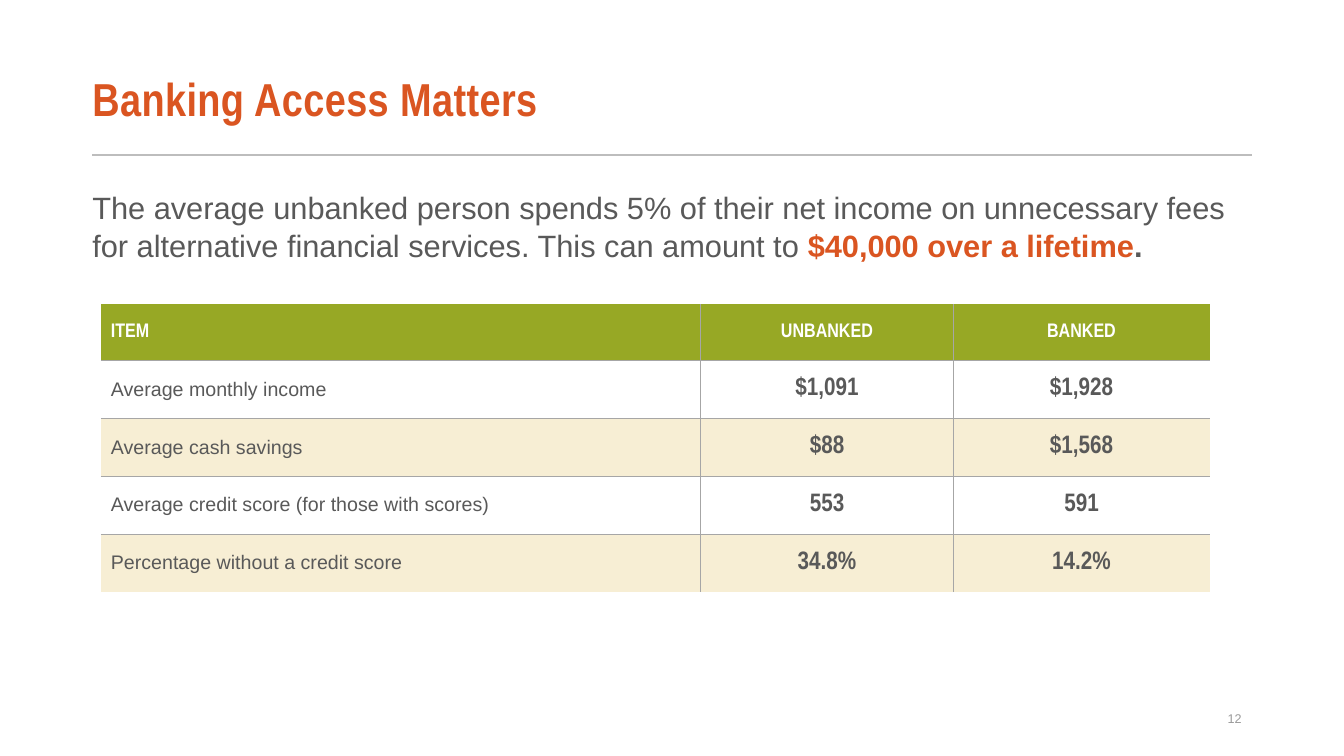
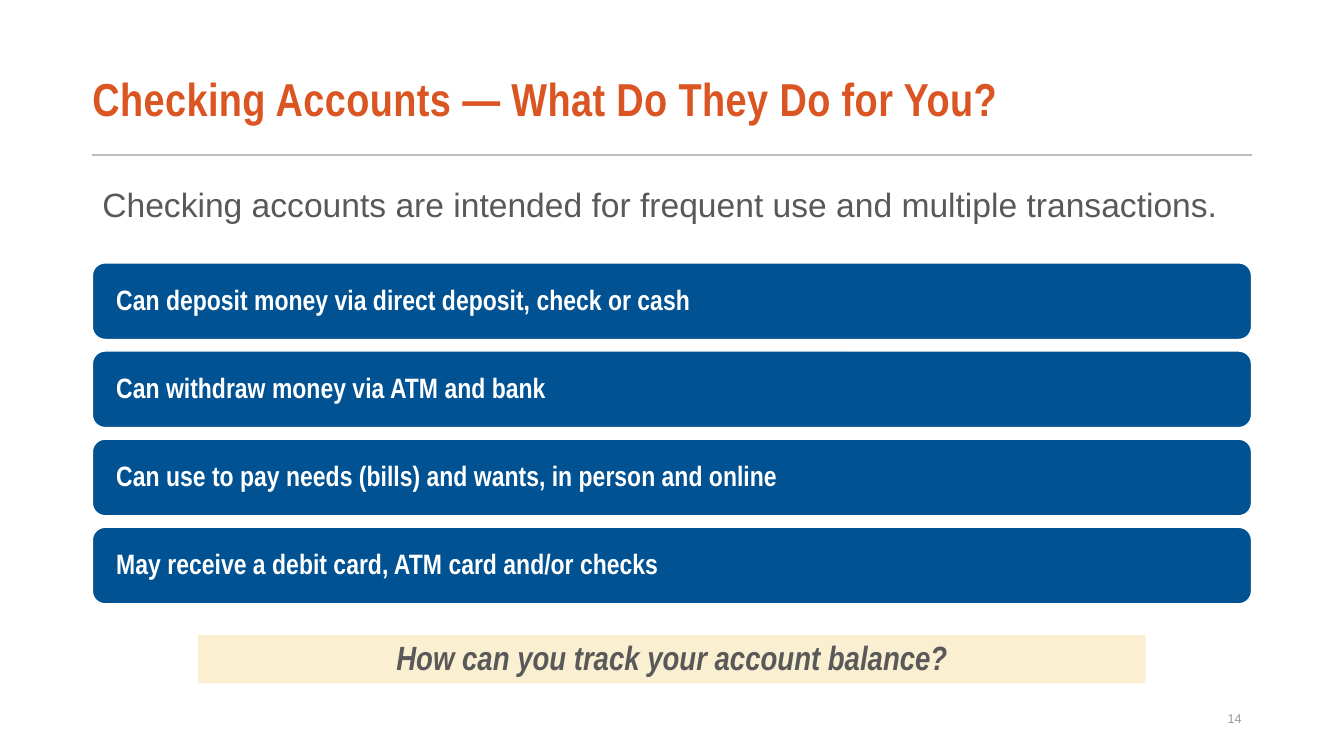
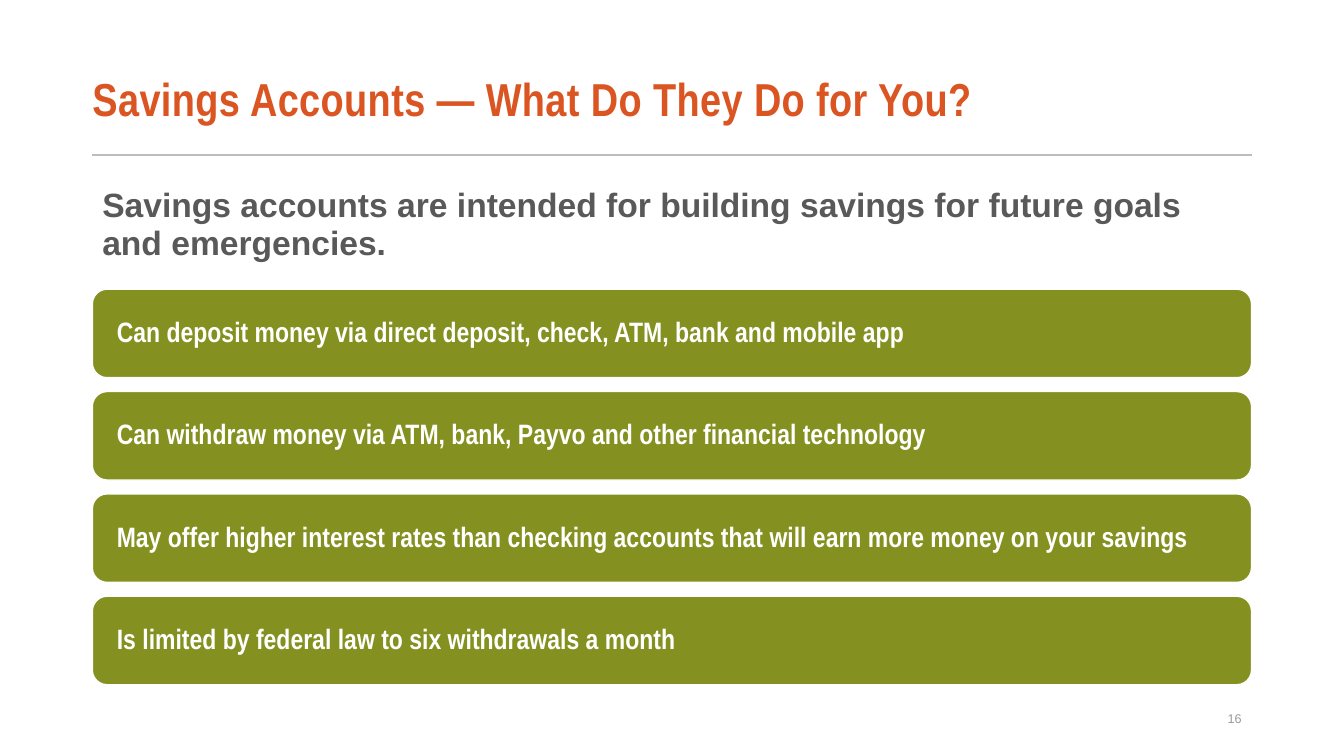
from lxml.etree import SubElement
from pptx import Presentation
from pptx.dml.color import RGBColor
from pptx.enum.shapes import MSO_CONNECTOR, MSO_SHAPE
from pptx.enum.text import MSO_ANCHOR as ANCHOR, MSO_AUTO_SIZE as FIT, PP_ALIGN as ALIGN
from pptx.oxml.ns import qn
from pptx.util import Pt

COLORS = {
    "orange": "DA5521", "gray": "595959", "white": "FFFFFF", "rule": "BDBDBD",
    "number": "9A9A9A", "grid": "A6A6A6", "header": "97A825", "band": "F7EED4",
    "blue": "005293", "olive": "849120", "cream": "FBEFD2",
}
HEADING, BODY = "Arial Narrow", "Arial"
LEFT, WIDTH = 66, 828


def color(name):
    return RGBColor.from_string(COLORS[name])


def write(frame, text, size, face, ink, bold=False, align=ALIGN.LEFT, spacing=None, anchor=None):
    frame.word_wrap = True
    if anchor is not None:
        frame.vertical_anchor = anchor
    line = frame.paragraphs[0]
    line.text = text
    line.alignment = align
    if spacing:
        line.line_spacing = spacing
    line.font.name, line.font.size, line.font.bold = face, Pt(size), bold
    line.font.color.rgb = color(ink)
    return line


deck = Presentation()
deck.slide_width, deck.slide_height = Pt(960), Pt(540)
title_only = deck.slide_layouts[5]

slides = []
for heading, number in [
    ("Banking Access Matters", "12"),
    ("Checking Accounts — What Do They Do for You?", "14"),
    ("Savings Accounts — What Do They Do for You?", "16"),
]:
    slide = deck.slides.add_slide(title_only)
    slides.append(slide)
    rule = slide.shapes.add_connector(
        MSO_CONNECTOR.STRAIGHT, Pt(LEFT), Pt(111), Pt(LEFT + WIDTH), Pt(111))
    rule.line.color.rgb, rule.line.width = color("rule"), Pt(1.5)
    SubElement(rule._element.spPr, qn("a:effectLst"))

    title = slide.shapes.title
    title.left, title.top, title.width, title.height = Pt(LEFT), Pt(39), Pt(WIDTH), Pt(68.4)
    title.text_frame.auto_size = FIT.NONE
    title.text_frame.margin_left = 0
    line = write(title.text_frame, heading, 33, HEADING, "orange", True,
                 spacing=0.87, anchor=ANCHOR.MIDDLE)
    line.runs[0]._r.get_or_add_rPr().set("spc", "30")

    page = slide.shapes.add_textbox(Pt(678), Pt(499), Pt(216), Pt(28.8))
    write(page.text_frame, number, 9, BODY, "number", align=ALIGN.RIGHT, anchor=ANCHOR.MIDDLE)

access, checking, savings = slides

cost = access.shapes.add_textbox(Pt(LEFT), Pt(129.6), Pt(WIDTH), Pt(70))
cost.text_frame.margin_left = 0
sentence = write(
    cost.text_frame,
    "The average unbanked person spends 5% of their net income on unnecessary "
    "fees for alternative financial services. This can amount to ",
    22, BODY, "gray", spacing=1.05)
for words, ink in [("$40,000 over a lifetime", "orange"), (".", "gray")]:
    run = sentence.add_run()
    run.text = words
    run.font.bold = True
    run.font.color.rgb = color(ink)

figures = [
    ("ITEM", "UNBANKED", "BANKED"),
    ("Average monthly income", "$1,091", "$1,928"),
    ("Average cash savings", "$88", "$1,568"),
    ("Average credit score (for those with scores)", "553", "591"),
    ("Percentage without a credit score", "34.8%", "14.2%"),
]
last_row, last_col = len(figures) - 1, len(figures[0]) - 1
comparison = access.shapes.add_table(
    len(figures), len(figures[0]), Pt(72), Pt(217.3), Pt(792), Pt(205.5)).table
for column, width in zip(comparison.columns, (428.4, 180.7, 182.9)):
    column.width = Pt(width)
for r, values in enumerate(figures):
    comparison.rows[r].height = Pt(41.3 if r else 40.3)
    for c, value in enumerate(values):
        cell = comparison.cell(r, c)
        borders = cell._tc.get_or_add_tcPr()
        for side, inner in [("L", c > 0), ("R", c < last_col), ("T", r > 0), ("B", r < last_row)]:
            edge = SubElement(borders, qn(f"a:ln{side}"), w=str(Pt(0.5)))
            if inner:
                ink = SubElement(edge, qn("a:solidFill"))
                SubElement(ink, qn("a:srgbClr"), val=COLORS["grid"])
            else:
                SubElement(edge, qn("a:noFill"))
        cell.fill.solid()
        cell.fill.fore_color.rgb = color("header" if r == 0 else "white" if r % 2 else "band")
        cell.vertical_anchor = ANCHOR.MIDDLE
        write(cell.text_frame, value, 18 if r and c else 14,
              BODY if r and c == 0 else HEADING, "gray" if r else "white",
              r == 0 or c > 0, ALIGN.CENTER if c else ALIGN.LEFT)

for slide, lead, lead_width, lead_bold, fill, top, height, pitch, features in [
    (checking, "Checking accounts are intended for frequent use and multiple transactions.",
     840, False, "blue", 187.8, 54.7, 62.95, [
         "Can deposit money via direct deposit, check or cash",
         "Can withdraw money via ATM and bank",
         "Can use to pay needs (bills) and wants, in person and online",
         "May receive a debit card, ATM card and/or checks",
     ]),
    (savings, "Savings accounts are intended for building savings for future goals and emergencies.",
     805, True, "olive", 206.6, 63.2, 73.1, [
         "Can deposit money via direct deposit, check, ATM, bank and mobile app",
         "Can withdraw money via ATM, bank, Payvo and other financial technology",
         "May offer higher interest rates than checking accounts that will earn more money on your savings",
         "Is limited by federal law to six withdrawals a month",
     ]),
]:
    purpose = slide.shapes.add_textbox(Pt(LEFT), Pt(130), Pt(lead_width), Pt(34.6))
    write(purpose.text_frame, lead, 24, BODY, "gray", lead_bold, spacing=0.95)
    purpose.text_frame.auto_size = FIT.SHAPE_TO_FIT_TEXT
    for i, feature in enumerate(features):
        bar = slide.shapes.add_shape(
            MSO_SHAPE.ROUNDED_RECTANGLE, Pt(LEFT), Pt(top + i * pitch), Pt(WIDTH), Pt(height))
        bar.shadow.inherit = False
        bar.fill.solid()
        bar.fill.fore_color.rgb = color(fill)
        bar.line.color.rgb, bar.line.width = color("white"), Pt(1)
        bar.text_frame.margin_left = Pt(14.4)
        write(bar.text_frame, feature, 20, HEADING, "white", True,
              spacing=0.9, anchor=ANCHOR.MIDDLE)

question = checking.shapes.add_shape(
    MSO_SHAPE.RECTANGLE, Pt(141.6), Pt(453.6), Pt(676.8), Pt(34.6))
question.shadow.inherit = False
question.fill.solid()
question.fill.fore_color.rgb = color("cream")
question.line.fill.background()
prompt = write(question.text_frame, "How can you track your account balance?", 24, HEADING,
               "gray", True, ALIGN.CENTER, 0.95, ANCHOR.MIDDLE)
prompt.font.italic = True

deck.save("out.pptx")
